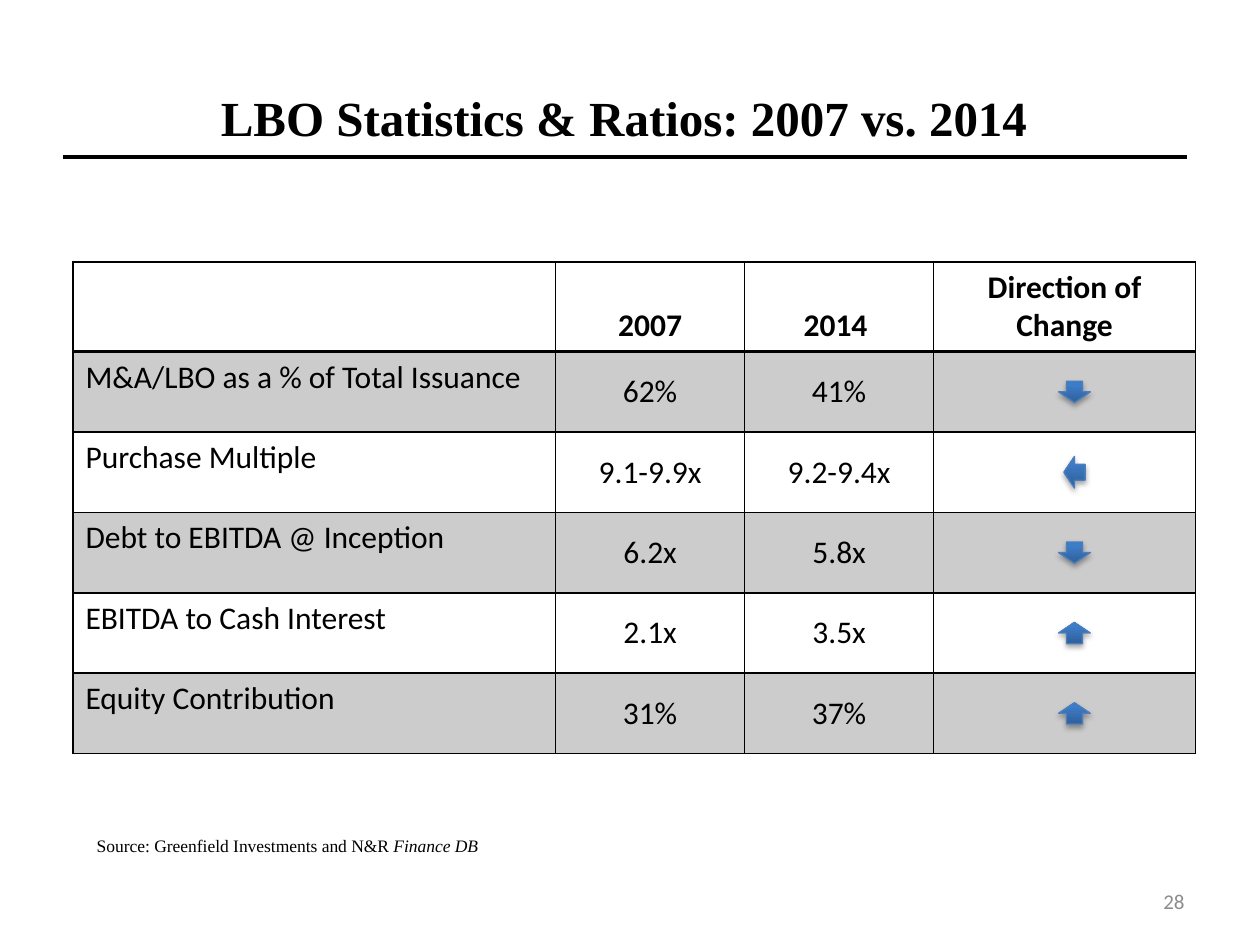
import copy
from collections import namedtuple

import pptx
import pptx.dml.color
import pptx.enum.shapes
import pptx.enum.text
import pptx.oxml
import pptx.oxml.ns
import pptx.util

Cm = pptx.util.Cm
Pt = pptx.util.Pt
ALIGN = pptx.enum.text.PP_ALIGN
ANCHOR = pptx.enum.text.MSO_ANCHOR
Box = namedtuple("Box", "left top width height")

COLORS = {
    "ink": "000000",
    "page_number": "8C8C8C",
    "arrow_dark": "2F5F99",
    "arrow_mid": "3D7CC7",
    "arrow_light": "3A7CCB",
    "arrow_line": "4B7EBC",
}
SERIF, SANS = "Times New Roman", "Calibri"
DOWN, LEFT, UP = 90, 180, 270  # rotation of a right arrow

COLUMN_WIDTHS = [9.73, 3.81, 3.81, 5.28]
HEADER_HEIGHT, ROW_HEIGHT = 1.81, 1.62
HEADERS = ["", "2007", "2014 ", "Direction of Change"]
RATIOS = [
    ("M&A/LBO as a % of Total Issuance", "62%", "41%", DOWN),
    ("Purchase Multiple", "9.1-9.9x", "9.2-9.4x", LEFT),
    ("Debt to EBITDA @ Inception", "6.2x", "5.8x", DOWN),
    ("EBITDA to Cash Interest", "2.1x", "3.5x", UP),
    ("Equity Contribution", "31%", "37%", UP),
]


def color(name):
    return pptx.dml.color.RGBColor.from_string(COLORS[name])


def xml(tag, content="", **attributes):
    """Return a DrawingML element with the given attributes and inner XML."""
    pairs = " ".join(f'{key}="{value}"' for key, value in attributes.items())
    namespace = pptx.oxml.ns.nsdecls("a")
    return pptx.oxml.parse_xml(f"<a:{tag} {namespace} {pairs}>{content}</a:{tag}>")


def solid_fill(name):
    return f'<a:solidFill><a:srgbClr val="{COLORS[name]}"/></a:solidFill>'


def add_run(paragraph, text, font, size, ink="ink", bold=False, italic=False):
    run = paragraph.add_run()
    run.text = text
    run.font.name = font
    run.font.size = Pt(size)
    run.font.bold = bold
    run.font.italic = italic
    run.font.color.rgb = color(ink)


def place(shape, box):
    shape.left, shape.top, shape.width, shape.height = map(Cm, box)


def add_text_box(slide, box):
    frame = slide.shapes.add_textbox(*map(Cm, box)).text_frame
    frame.word_wrap = True
    return frame


def add_heading(slide, box):
    """Format the title and rule a line under it."""
    title = slide.shapes.title
    place(title, box)
    title.text_frame.vertical_anchor = ANCHOR.MIDDLE
    paragraph = title.text_frame.paragraphs[0]
    paragraph.alignment = ALIGN.CENTER
    add_run(paragraph, "LBO Statistics & Ratios: 2007 vs. 2014 ", SERIF, 28, bold=True)

    rule_top = Cm(box.top + 2.41)
    rule = slide.shapes.add_connector(
        pptx.enum.shapes.MSO_CONNECTOR.STRAIGHT,
        Cm(box.left), rule_top, Cm(box.left + 22.66), rule_top)
    rule.line.color.rgb = color("ink")
    rule.line.width = Pt(2.25)
    rule._element.spPr.append(xml("effectLst"))


def format_cell(cell, shaded, bottom_width):
    """Give a cell black borders and, if shaded, a see-through black fill."""
    if shaded:
        cell.fill.solid()
        cell.fill.fore_color.rgb = color("ink")
    else:
        cell.fill.background()
    properties = cell._tc.get_or_add_tcPr()
    if shaded:
        tint = properties.find(".//" + pptx.oxml.ns.qn("a:srgbClr"))
        tint.append(xml("alpha", val=20000))
    widths = {"lnL": 1, "lnR": 1, "lnT": 1, "lnB": bottom_width}
    for position, (side, width) in enumerate(widths.items()):
        properties.insert(position, xml(side, solid_fill("ink"), w=Pt(width)))


def add_arrow(slide, center_x, center_y, rotation):
    width, height = 0.43, 0.64
    arrow = slide.shapes.add_shape(
        pptx.enum.shapes.MSO_SHAPE.RIGHT_ARROW,
        Cm(center_x - width / 2), Cm(center_y - height / 2), Cm(width), Cm(height))
    arrow.rotation = rotation
    arrow.line.color.rgb = color("arrow_line")
    arrow.line.width = Pt(0.75)

    arrow.fill.gradient()
    arrow.fill.gradient_angle = 90
    properties = arrow._element.spPr
    properties.find(pptx.oxml.ns.qn("a:gradFill")).set("rotWithShape", "0")
    stop_list = properties.find(".//" + pptx.oxml.ns.qn("a:gsLst"))
    stop_list.append(copy.deepcopy(stop_list[-1]))
    stops = [(0, "arrow_dark"), (0.8, "arrow_mid"), (1, "arrow_light")]
    for stop, (position, name) in zip(arrow.fill.gradient_stops, stops):
        stop.position = position
        stop.color.rgb = color(name)

    arrow.shadow.inherit = False
    shade = f'<a:srgbClr val="{COLORS["ink"]}"><a:alpha val="35000"/></a:srgbClr>'
    properties.find(pptx.oxml.ns.qn("a:effectLst")).append(
        xml("outerShdw", shade, blurRad=Pt(3.1), dist=Pt(1.8), dir=5400000,
            rotWithShape=0))


def add_ratio_table(slide, box):
    """Place the ratios and, in the last column, an arrow for each row."""
    rows = [HEADERS] + [[*ratio[:3], ""] for ratio in RATIOS]
    table = slide.shapes.add_table(len(rows), len(HEADERS), *map(Cm, box)).table
    table.first_row = table.horz_banding = False
    for column, width in zip(table.columns, COLUMN_WIDTHS):
        column.width = Cm(width)

    for row_index, texts in enumerate(rows):
        is_header = row_index == 0
        table.rows[row_index].height = Cm(HEADER_HEIGHT if is_header else ROW_HEIGHT)
        for column_index, text in enumerate(texts):
            cell = table.cell(row_index, column_index)
            format_cell(cell, row_index % 2 == 1, 2 if is_header else 1)
            if not text:
                continue
            paragraph = cell.text_frame.paragraphs[0]
            if column_index > 0:
                paragraph.alignment = ALIGN.CENTER
                cell.vertical_anchor = ANCHOR.BOTTOM if is_header else ANCHOR.MIDDLE
            add_run(paragraph, text, SANS, 18, bold=is_header)

    arrow_x = box.left + sum(COLUMN_WIDTHS[:-1]) + COLUMN_WIDTHS[-1] / 2 + 0.2
    first_center = box.top + HEADER_HEIGHT + ROW_HEIGHT / 2
    for index, ratio in enumerate(RATIOS):
        add_arrow(slide, arrow_x, first_center + index * ROW_HEIGHT, ratio[3])


def add_source(slide, box):
    frame = add_text_box(slide, box)
    frame.auto_size = pptx.enum.text.MSO_AUTO_SIZE.SHAPE_TO_FIT_TEXT
    paragraph = frame.paragraphs[0]
    paragraph.space_before = Pt(2)
    add_run(paragraph, "Source: Greenfield Investments and N&R", SERIF, 10)
    add_run(paragraph, " Finance DB", SERIF, 10, italic=True)


def add_page_number(slide, box):
    frame = add_text_box(slide, box)
    frame.vertical_anchor = ANCHOR.MIDDLE
    paragraph = frame.paragraphs[0]
    paragraph.alignment = ALIGN.RIGHT
    add_run(paragraph, "28", SANS, 12, "page_number")


def main():
    presentation = pptx.Presentation()
    presentation.slide_width, presentation.slide_height = Cm(25.4), Cm(19.05)
    slide = presentation.slides.add_slide(presentation.slide_layouts[5])
    add_heading(slide, Box(1.27, 0.76, 22.86, 3.18))
    table_height = HEADER_HEIGHT + len(RATIOS) * ROW_HEIGHT
    add_ratio_table(slide, Box(1.47, 5.28, sum(COLUMN_WIDTHS), table_height))
    add_source(slide, Box(1.7, 16.71, 9.73, 0.69))
    add_page_number(slide, Box(18.21, 17.65, 5.92, 1.02))
    presentation.save("out.pptx")


if __name__ == "__main__":
    main()
